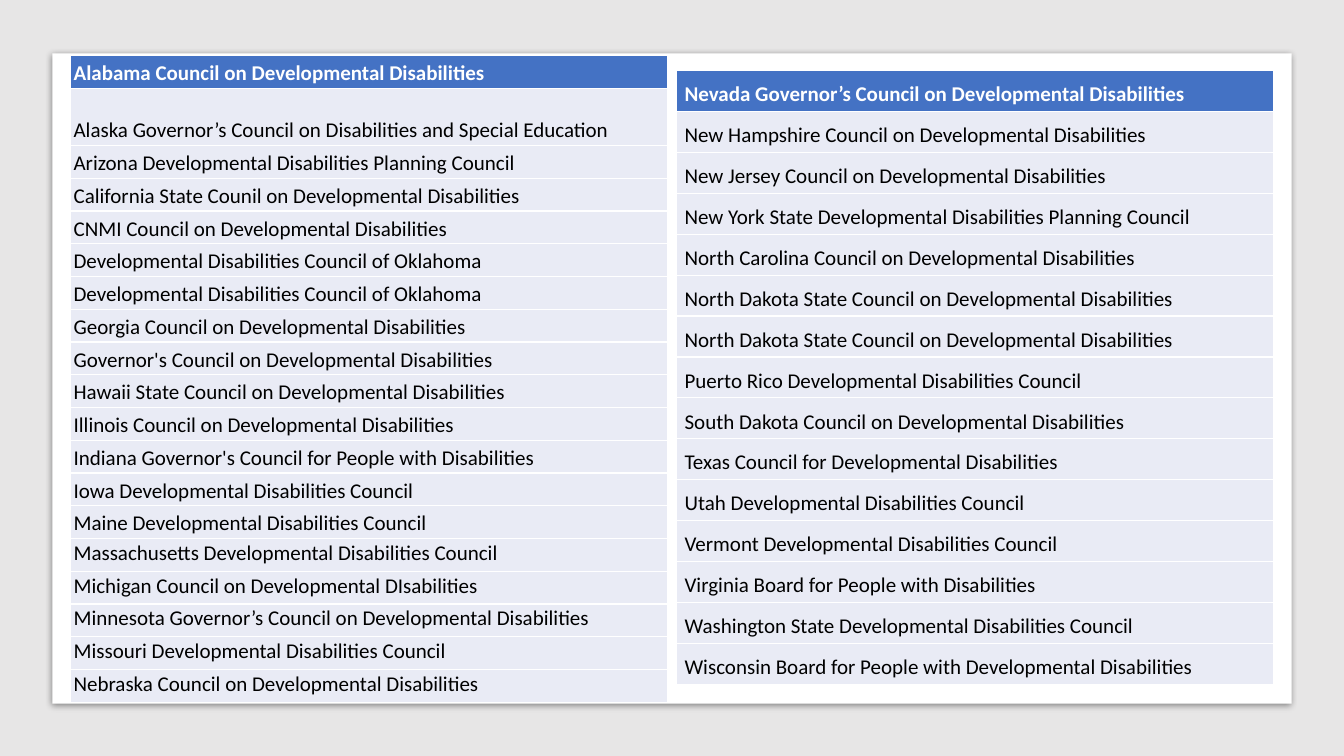
from dataclasses import dataclass

from lxml import etree
from pptx import Presentation
from pptx import util as u
from pptx.dml.color import RGBColor
from pptx.enum import shapes, text
from pptx.oxml import ns


@dataclass(frozen=True)
class Theme:
    back: str = "E7E6E6"
    card: str = "FFFFFF"
    head: str = "4472C4"
    row: str = "E9EBF5"
    light: str = "FFFFFF"
    dark: str = "000000"
    shade: str = "000000"
    font: str = "Calibri"
    size: int = 15


THEME = Theme()

LEFT = [
    "Alabama Council on Developmental Disabilities",
    "Alaska Governor’s Council on Disabilities and Special Education",
    "Arizona Developmental Disabilities Planning Council",
    "California State Counil on Developmental Disabilities",
    "CNMI Council on Developmental Disabilities",
    "Developmental Disabilities Council of Oklahoma",
    "Developmental Disabilities Council of Oklahoma",
    "Georgia Council on Developmental Disabilities",
    "Governor's Council on Developmental Disabilities",
    "Hawaii State Council on Developmental Disabilities",
    "Illinois Council on Developmental Disabilities",
    "Indiana Governor's Council for People with Disabilities",
    "Iowa Developmental Disabilities Council",
    "Maine Developmental Disabilities Council",
    "Massachusetts Developmental Disabilities Council",
    "Michigan Council on Developmental DIsabilities",
    "Minnesota Governor’s Council on Developmental Disabilities",
    "Missouri Developmental Disabilities Council",
    "Nebraska Council on Developmental Disabilities",
]
RIGHT = [
    "Nevada Governor’s Council on Developmental Disabilities",
    "New Hampshire Council on Developmental Disabilities",
    "New Jersey Council on Developmental Disabilities",
    "New York State Developmental Disabilities Planning Council",
    "North Carolina Council on Developmental Disabilities",
    "North Dakota State Council on Developmental Disabilities",
    "North Dakota State Council on Developmental Disabilities",
    "Puerto Rico Developmental Disabilities Council",
    "South Dakota Council on Developmental Disabilities",
    "Texas Council for Developmental Disabilities",
    "Utah Developmental Disabilities Council",
    "Vermont Developmental Disabilities Council",
    "Virginia Board for People with Disabilities",
    "Washington State Developmental Disabilities Council",
    "Wisconsin Board for People with Developmental Disabilities",
]


def paint(part, color):
    part.fill.solid()
    part.fill.fore_color.rgb = RGBColor.from_string(color)


def panel(slide, box, color):
    rect = slide.shapes.add_shape(
        shapes.MSO_SHAPE.RECTANGLE, *map(u.Inches, box))
    rect.shadow.inherit = False
    rect.line.fill.background()
    paint(rect, color)
    return rect


def shade(rect):
    """Give the shape a soft shadow that falls straight down."""
    effects = rect.element.spPr.find(ns.qn("a:effectLst"))
    outer = etree.SubElement(
        effects, ns.qn("a:outerShdw"), blurRad=str(u.Pt(5)),
        dist=str(u.Pt(1.4)), dir="5400000", algn="t", rotWithShape="0")
    color = etree.SubElement(outer, ns.qn("a:srgbClr"), val=THEME.shade)
    etree.SubElement(color, ns.qn("a:alpha"), val="43000")


def roster(slide, box, names, inset, tall=None, top=None):
    """List names in one column; row 1 may be tall, rows from top sit high."""
    x, y, wide, high = box
    table = slide.shapes.add_table(
        len(names), 1, *map(u.Inches, (x, y, wide, high))).table
    table.horz_banding = False
    step = (high - tall) / (len(names) - 1) if tall else high / len(names)
    side, edge = map(u.Inches, inset)
    for i, name in enumerate(names):
        table.rows[i].height = u.Inches(tall if tall and i == 1 else step)
        cell = table.cell(i, 0)
        paint(cell, THEME.row if i else THEME.head)
        cell.margin_left = cell.margin_right = side
        cell.margin_top = cell.margin_bottom = edge
        high_up = top is not None and i >= top
        cell.vertical_anchor = (
            text.MSO_ANCHOR.TOP if high_up else text.MSO_ANCHOR.BOTTOM)
        run = cell.text_frame.paragraphs[0].add_run()
        run.text = name
        run.font.name = THEME.font
        run.font.size = u.Pt(THEME.size)
        run.font.bold = i == 0
        run.font.color.rgb = RGBColor.from_string(
            THEME.dark if i else THEME.light)


def main():
    deck = Presentation()
    deck.slide_width, deck.slide_height = u.Inches(13.33), u.Inches(7.5)
    slide = deck.slides.add_slide(deck.slide_layouts[6])
    panel(slide, (0, 0, 13.33, 7.5), THEME.back)
    shade(panel(slide, (0.52, 0.53, 12.29, 6.45), THEME.card))
    roster(slide, (6.71, 0.7, 5.92, 6.09), RIGHT, (0.08, 0.04))
    roster(slide, (0.7, 0.55, 5.92, 6.42), LEFT, (0.03, 0.02),
           tall=0.57, top=LEFT.index(
               "Massachusetts Developmental Disabilities Council"))
    deck.save("out.pptx")


if __name__ == "__main__":
    main()
